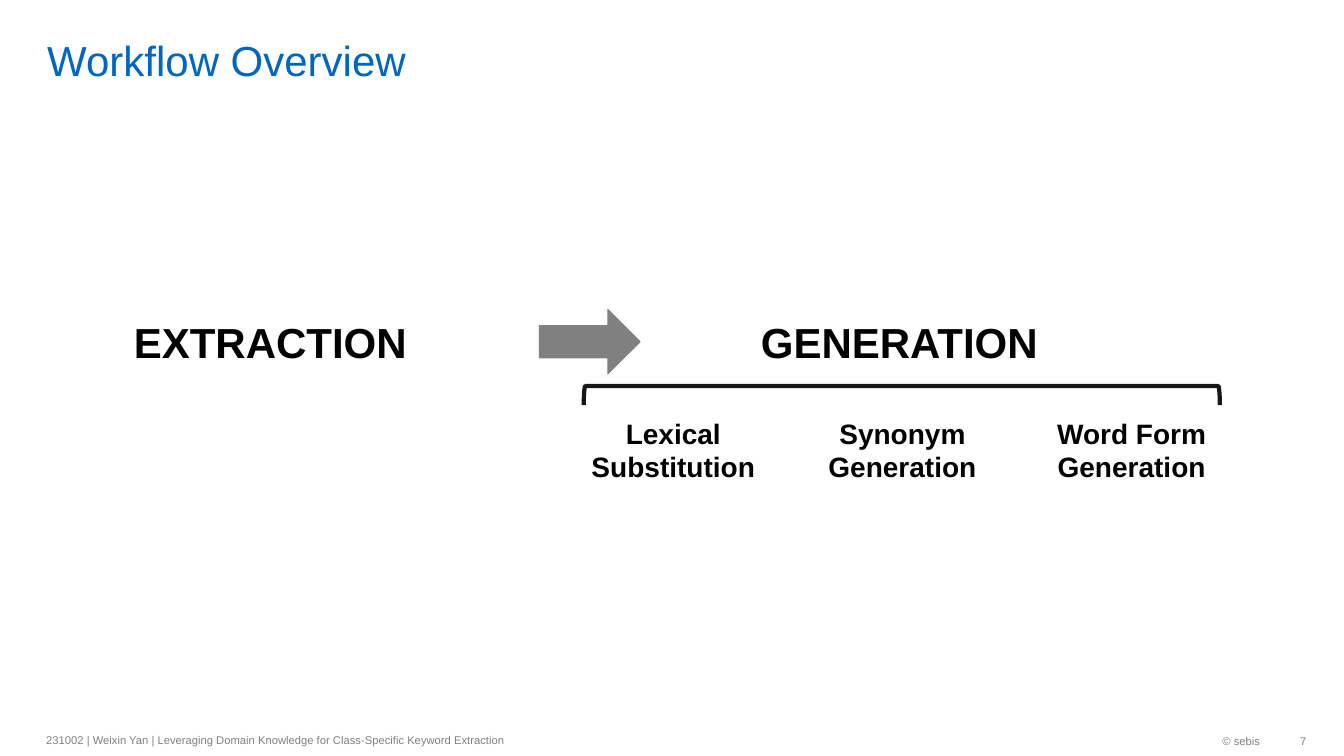
from pptx import Presentation, util as u
from pptx.dml.color import RGBColor
from pptx.enum import shapes, text
from pptx.oxml import parse_xml
from pptx.oxml.ns import nsdecls

# Content: boxes are left, top, width, height in percent of the slide
TITLE = "Workflow Overview"
STAGES = [("EXTRACTION", 9.23, 22.05), ("GENERATION", 55.88, 22.35)]
STEPS = ["Lexical Substitution", "Synonym Generation", "Word Form Generation"]
FOOT = "231002 | Weixin Yan | Leveraging Domain Knowledge for Class-Specific Keyword Extraction"
OWNER, PAGE = "© sebis", "7"
ARROW = (40.13, 40.93, 7.5, 8.53)
BRACE = (43.43, 51.07, 47.33, 2.53)
STEP_X, STEP_GAP = 40.8, 17.05

# Theme
THEME = {
    "font": "Arial",
    "grey": RGBColor(0x80, 0x80, 0x80),
    "black": RGBColor(0, 0, 0),
    "title": {"size": 30, "color": RGBColor(0x00, 0x65, 0xBD), "bold": False},
    "stage": {"size": 30, "color": RGBColor(0, 0, 0), "bold": True},
    "step": {"size": 20, "color": RGBColor(0, 0, 0), "bold": True},
    "foot": {"size": 8, "color": RGBColor(0x80, 0x80, 0x80), "bold": False},
}
LEFT, MID, RIGHT = text.PP_ALIGN.LEFT, text.PP_ALIGN.CENTER, text.PP_ALIGN.RIGHT
TOP, CENTER, BASE = text.MSO_ANCHOR.TOP, text.MSO_ANCHOR.MIDDLE, text.MSO_ANCHOR.BOTTOM

deck = Presentation()
deck.slide_width, deck.slide_height = u.Inches(13.33), u.Inches(7.5)
slide = deck.slides.add_slide(deck.slide_layouts[6])


def place(box):
    sides = (deck.slide_width, deck.slide_height) * 2
    return [int(side * part / 100) for side, part in zip(sides, box)]


def write(words, box, style, align=LEFT, anchor=TOP, wrap=False, **inset):
    frame = slide.shapes.add_textbox(*place(box)).text_frame
    form = {"word_wrap": wrap, "vertical_anchor": anchor}
    form.update({"margin_" + side: u.Inches(gap) for side, gap in inset.items()})
    for key, value in form.items():
        setattr(frame, key, value)
    line = frame.paragraphs[0]
    line.alignment = align
    run = line.add_run()
    run.text = words
    look = THEME[style]
    form = {"name": THEME["font"], "size": u.Pt(look["size"]), "bold": look["bold"]}
    for key, value in form.items():
        setattr(run.font, key, value)
    run.font.color.rgb = look["color"]


def draw(kind, box, color, width):
    shape = slide.shapes.add_shape(kind, *place(box))
    shape.shadow.inherit = False
    shape.line.color.rgb = color
    shape.line.width = u.Pt(width)
    return shape


# Title and footer
write(TITLE, (2.78, 0.67, 86.85, 10.53), "title", anchor=BASE, wrap=True, top=0, bottom=0)
write(FOOT, (2.7, 95.73, 47.25, 4.27), "foot", anchor=CENTER, wrap=True)
write(OWNER, (76.95, 95.87, 17.55, 4.27), "foot", RIGHT, CENTER)
write(PAGE, (94.5, 95.87, 2.7, 4.27), "foot", RIGHT, CENTER, right=0)

# Stages and their steps
for name, left, width in STAGES:
    write(name, (left, 41.2, width, 8.13), "stage")
for i, name in enumerate(STEPS):
    write(name, (STEP_X + i * STEP_GAP, 54.4, 18.6, 10.27), "step", MID, wrap=True)

# Bracket over the steps: a left bracket turned about its centre to open down
brace = draw(shapes.MSO_SHAPE.LEFT_BRACKET, BRACE, THEME["black"], 3)
wide, high = brace.width, brace.height
brace.left += (wide - high) // 2
brace.top -= (wide - high) // 2
brace.width, brace.height = high, wide
brace.rotation = 90
brace.fill.background()
ink = brace.line.fill.fore_color._xFill.find(".//{*}srgbClr")
ink.append(parse_xml(f'<a:alpha {nsdecls("a")} val="91000"/>'))

# Arrow between the stages
arrow = draw(shapes.MSO_SHAPE.RIGHT_ARROW, ARROW, THEME["grey"], 0.75)
arrow.fill.solid()
arrow.fill.fore_color.rgb = THEME["grey"]

deck.save("out.pptx")
